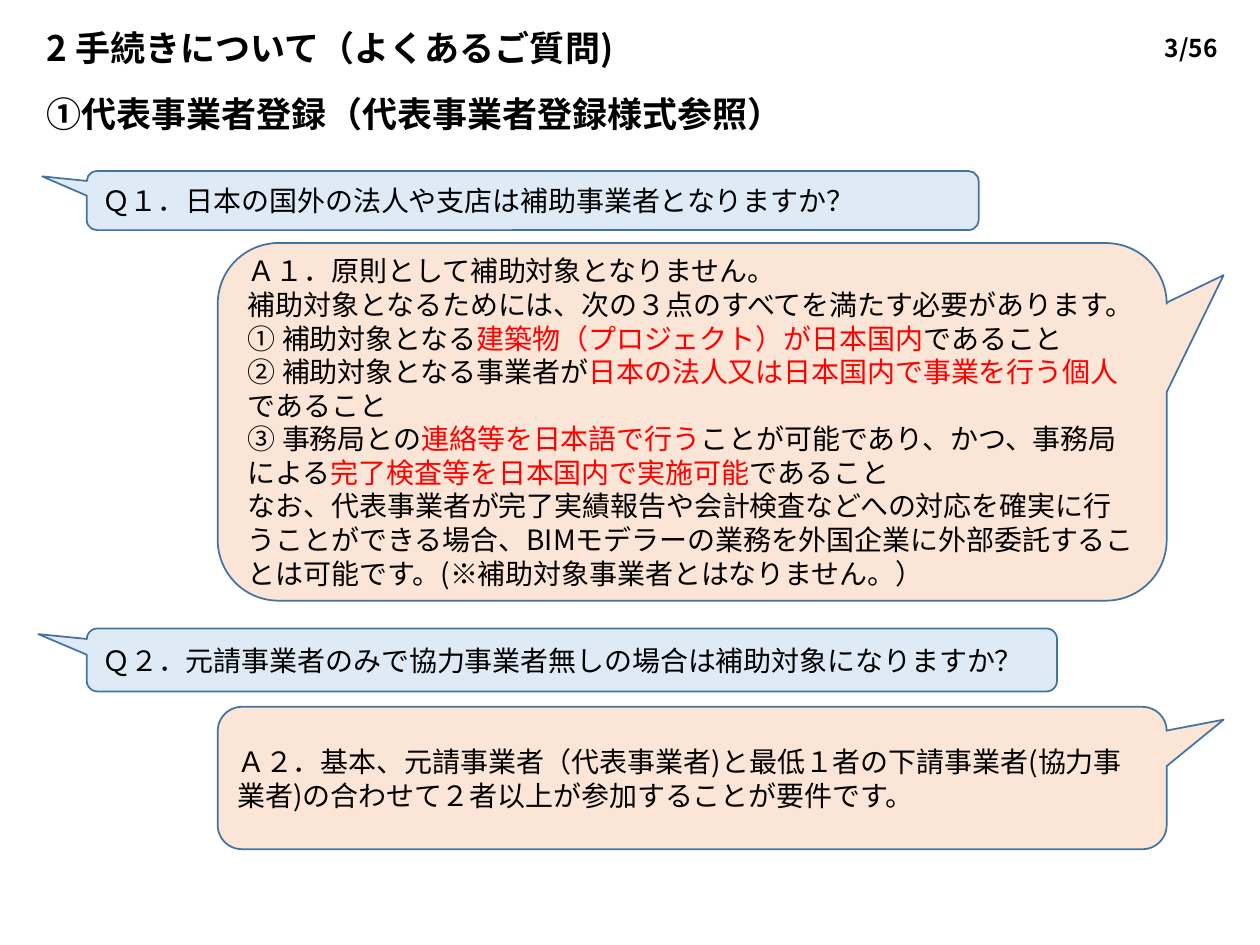
from lxml import etree
from pptx import Presentation
from pptx.dml.color import RGBColor
from pptx.enum.shapes import MSO_SHAPE
from pptx.enum.text import MSO_ANCHOR, PP_ALIGN
from pptx.oxml.ns import qn
from pptx.util import Cm, Pt

FONT = "Noto Sans CJK JP"
BLACK, RED, WHITE = "000000", "FF0000", "FFFFFF"
BLUE, PEACH, EDGE = "DEEBF7", "FBE5D6", "43739E"
RECT = MSO_SHAPE.RECTANGLE
BUBBLE = MSO_SHAPE.ROUNDED_RECTANGULAR_CALLOUT
MIDDLE = MSO_ANCHOR.MIDDLE
LEFT, CENTER = PP_ALIGN.LEFT, PP_ALIGN.CENTER

ASK_TAIL = (-0.55, -0.41, 0.17)
REPLY_TAIL = (0.56, -0.41, 0.17)

ASK_1 = [["Ｑ１．日本の国外の法人や支店は補助事業者となりますか？"]]
REPLY_1 = [
    ["Ａ１．原則として補助対象となりません。"],
    ["補助対象となるためには、次の３点のすべてを満たす必要があります。"],
    ["① 補助対象となる", "建築物（プロジェクト）が日本国内", "であること"],
    ["② 補助対象となる事業者が", "日本の法人又は日本国内で事業を行う個人", "であること"],
    ["③ 事務局との", "連絡等を日本語で行う", "ことが可能であり、かつ、事務局による",
     "完了検査等を日本国内で実施可能", "であること"],
    ["なお、代表事業者が完了実績報告や会計検査などへの対応を確実に行うことができる場合、"
     "BIMモデラーの業務を外国企業に外部委託することは可能です。"
     "(※補助対象事業者とはなりません。）"],
]
ASK_2 = [["Ｑ２．元請事業者のみで協力事業者無しの場合は補助対象になりますか？"]]
REPLY_2 = [["Ａ２．基本、元請事業者（代表事業者)と最低１者の下請事業者(協力事業者)の"
            "合わせて２者以上が参加することが要件です。"]]


def color(code):
    return RGBColor.from_string(code)


def write(shape, paras, size, pitch, bold=False, align=LEFT):
    frame = shape.text_frame
    frame.word_wrap = True
    frame.vertical_anchor = MIDDLE
    for i, parts in enumerate(paras):
        para = frame.paragraphs[0] if i == 0 else frame.add_paragraph()
        para.alignment = align
        para.line_spacing = Pt(pitch)
        for j, text in enumerate(parts):
            run = para.add_run()
            run.text = text
            font = run.font
            font.name, font.size, font.bold = FONT, Pt(size), bold
            font.color.rgb = color(RED if j % 2 else BLACK)
            east = etree.SubElement(run._r.get_or_add_rPr(), qn("a:ea"))
            east.set("typeface", FONT)


def place(slide, kind, box, fill):
    shape = slide.shapes.add_shape(kind, *map(Cm, box))
    shape.shadow.inherit = False
    shape.fill.solid()
    shape.fill.fore_color.rgb = color(fill)
    return shape


def header(slide, box):
    left, top, width, height = box
    title = slide.shapes.add_textbox(Cm(left), Cm(top), Cm(20.62), Cm(height))
    write(title, [["2 手続きについて（よくあるご質問)"]], 20, 40, True)

    topic = place(slide, RECT, (left, top + 1.73, 20.07, 1.12), WHITE)
    topic.line.fill.background()
    write(topic, [["①代表事業者登録（代表事業者登録様式参照）"]], 20, 24, True)

    wide = 2.77
    page = slide.shapes.add_textbox(Cm(left + width - wide), Cm(top), Cm(wide), Cm(1.09))
    write(page, [["3/56"]], 14, 40, True, CENTER)


def bubble(slide, box, fill, tail, paras):
    shape = place(slide, BUBBLE, box, fill)
    shape.line.color.rgb = color(EDGE)
    shape.line.width = Pt(1)
    for i, value in enumerate(tail):
        shape.adjustments[i] = value
    write(shape, paras, 16, 19.2)


def pair(slide, box, ask, ask_size, reply, reply_high):
    left, top, width, height = box
    wide = 19.13
    bubble(slide, (left, top, *ask_size), BLUE, ASK_TAIL, ask)
    bubble(slide, (left + width - wide, top + height - reply_high, wide, reply_high),
           PEACH, REPLY_TAIL, reply)


def main():
    deck = Presentation()
    deck.slide_width, deck.slide_height = Cm(25.4), Cm(19.05)
    slide = deck.slides.add_slide(deck.slide_layouts[6])
    header(slide, (0.69, 0, 24.71, 1.37))
    pair(slide, (1.75, 3.45, 21.77, 8.66), ASK_1, (17.98, 1.19), REPLY_1, 7.21)
    pair(slide, (1.75, 12.67, 21.77, 4.45), ASK_2, (19.56, 1.27), REPLY_2, 2.87)
    deck.save("out.pptx")


if __name__ == "__main__":
    main()
